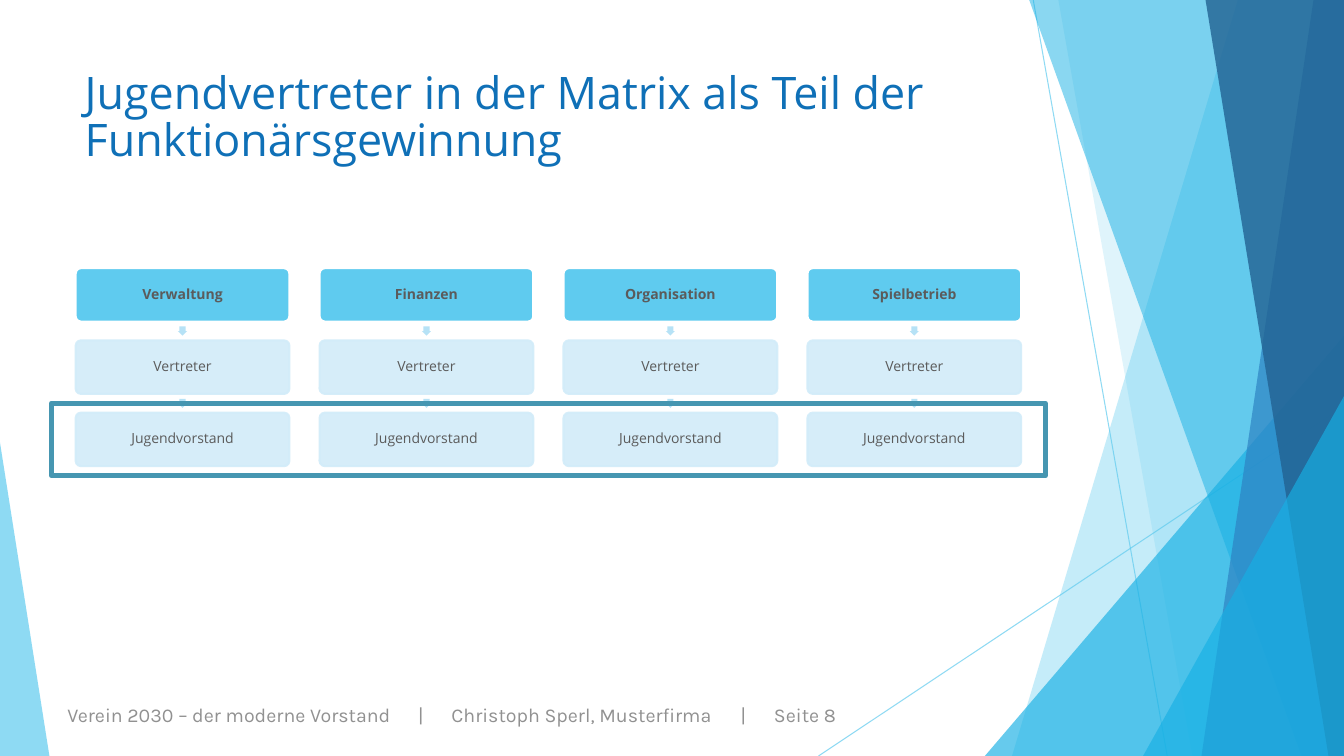
"""Build the slide on youth representatives in the club's function matrix."""
from dataclasses import dataclass

from lxml.etree import SubElement
from pptx import Presentation
from pptx.dml.color import RGBColor
from pptx.enum.shapes import MSO_CONNECTOR, MSO_SHAPE
from pptx.enum.text import MSO_ANCHOR, MSO_AUTO_SIZE, PP_ALIGN
from pptx.oxml.ns import qn
from pptx.util import Inches, Pt

COLOURS = {
    "sky": "5FCBEF", "cyan": "17B0E4", "blue": "2E83C3", "navy": "226292",
    "title": "0F70B7", "footer": "919191", "text": "5B5B5B", "white": "FFFFFF",
    "pale": "D2ECF9", "arrow": "B6E2F6", "frame": "4696B1",
}
FONT = "Open Sans"

prs = Presentation()
prs.slide_width, prs.slide_height = Inches(13.333), Inches(7.5)
s = prs.slides.add_slide(prs.slide_layouts[5])


@dataclass
class Box:
    """Place on the slide, in percent of its width and height."""
    left: float
    top: float
    width: float
    height: float


@dataclass
class Ray:
    """Thin line between two points."""
    x1: float
    y1: float
    x2: float
    y2: float


@dataclass
class Facet:
    """Full-height area from a slanted left edge to the right margin."""
    top_x: float
    bottom_x: float
    colour: str
    alpha: int


@dataclass
class Wedge:
    """Triangle at a slide corner, with its tip to the left (0) or right (1)."""
    box: Box
    tip: int
    colour: str
    alpha: int


@dataclass
class CardStyle:
    """Look of one row of cards."""
    fill: str
    line: str
    alpha: int
    bold: bool


BACKDROP = [
    Ray(76.88, 0, 86.85, 100),
    Ray(100, 53.73, 60.9, 100),
    Facet(92.1, 75.3, "sky", 36),
    Facet(78.75, 88.73, "sky", 20),
    Wedge(Box(73.28, 44.4, 26.72, 55.6), 1, "cyan", 66),
    Facet(76.58, 96.83, "cyan", 50),
    Facet(97.73, 89.4, "blue", 70),
    Facet(89.7, 98.85, "navy", 80),
    Wedge(Box(85.05, 52.4, 14.95, 47.6), 1, "cyan", 66),
    Wedge(Box(0, 58.53, 3.68, 41.47), 0, "sky", 70),
]
HEAD = CardStyle("sky", "white", 100, True)
BODY = CardStyle("pale", "pale", 90, False)
AREAS = ["Verwaltung", "Finanzen", "Organisation", "Spielbetrieb"]
ROLES = ["Vertreter", "Jugendvorstand"]
FIRST = Box(5.63, 35.47, 15.9, 7.07)
COL_STEP, ROW_STEP = 18.15, 9.56
ARROW = Inches(0.09)


def x(share: float) -> int:
    return round(prs.slide_width * share / 100)


def y(share: float) -> int:
    return round(prs.slide_height * share / 100)


def place(box: Box) -> tuple[int, int, int, int]:
    return x(box.left), y(box.top), x(box.width), y(box.height)


def rgb(name: str) -> RGBColor:
    return RGBColor.from_string(COLOURS[name])


def set_alpha(sp, percent: int) -> None:
    for clr in sp._element.spPr.iter(qn("a:srgbClr")):
        SubElement(clr, qn("a:alpha"), val=str(percent * 1000))


def paint(sp, fill: str, alpha: int = 100, line: str = "", width: float = 1.5) -> None:
    sp.shadow.inherit = False
    if fill:
        sp.fill.solid()
        sp.fill.fore_color.rgb = rgb(fill)
    else:
        sp.fill.background()
    if line:
        sp.line.color.rgb = rgb(line)
        sp.line.width = Pt(width)
    else:
        sp.line.fill.background()
    if alpha < 100:
        set_alpha(sp, alpha)


def style(p, size: int, colour: str, font: str = FONT, bold: bool = False) -> None:
    p.font.name, p.font.size, p.font.bold = font, Pt(size), bold
    p.font.color.rgb = rgb(colour)


def draw_ray(ray: Ray) -> None:
    c = s.shapes.add_connector(MSO_CONNECTOR.STRAIGHT, x(ray.x1), y(ray.y1), x(ray.x2), y(ray.y2))
    c.line.color.rgb = rgb("sky")
    c.line.width = Pt(0.75)
    set_alpha(c, 70)
    SubElement(c._element.spPr, qn("a:effectLst"))


def draw_facet(facet: Facet) -> None:
    fb = s.shapes.build_freeform(x(facet.top_x), 0)
    fb.add_line_segments([(x(100), 0), (x(100), y(100)), (x(facet.bottom_x), y(100))])
    paint(fb.convert_to_shape(), facet.colour, facet.alpha)


def draw_wedge(wedge: Wedge) -> None:
    sp = s.shapes.add_shape(MSO_SHAPE.ISOSCELES_TRIANGLE, *place(wedge.box))
    sp.adjustments[0] = wedge.tip
    paint(sp, wedge.colour, wedge.alpha)


def draw_card(col: int, row: int, text: str, look: CardStyle) -> None:
    box = Box(FIRST.left + col * COL_STEP, FIRST.top + row * ROW_STEP, FIRST.width, FIRST.height)
    sp = s.shapes.add_shape(MSO_SHAPE.ROUNDED_RECTANGLE, *place(box))
    sp.adjustments[0] = 0.1
    paint(sp, look.fill, look.alpha, look.line)
    tf = sp.text_frame
    tf.vertical_anchor = MSO_ANCHOR.MIDDLE
    p = tf.paragraphs[0]
    p.text, p.alignment, p.line_spacing = text, PP_ALIGN.CENTER, 0.9
    style(p, 10, "text", bold=look.bold)


def draw_arrow(col: int, row: int) -> None:
    mid_x = x(FIRST.left + col * COL_STEP + FIRST.width / 2)
    mid_y = y(FIRST.top + row * ROW_STEP + (FIRST.height + ROW_STEP) / 2)
    sp = s.shapes.add_shape(MSO_SHAPE.RIGHT_ARROW, mid_x - ARROW // 2, mid_y - ARROW // 2, ARROW, ARROW)
    sp.rotation = 90
    sp.adjustments[0] = 0.67
    paint(sp, "arrow")


def draw_title() -> None:
    sp = s.shapes.title
    sp.left, sp.top, sp.width, sp.height = place(Box(5.55, 8.93, 70.5, 19.2))
    tf = sp.text_frame
    tf.auto_size, tf.vertical_anchor = MSO_AUTO_SIZE.NONE, MSO_ANCHOR.TOP
    p = tf.paragraphs[0]
    p.text = "Jugendvertreter in der Matrix als Teil der Funktionärsgewinnung"
    p.alignment, p.line_spacing = PP_ALIGN.LEFT, 0.87
    style(p, 32, "title")


def draw_footer() -> None:
    tf = s.shapes.add_textbox(*place(Box(4.28, 92.27, 77.7, 4.53))).text_frame
    tf.word_wrap = True
    p = tf.paragraphs[0]
    p.text = "Verein 2030 – der moderne Vorstand\t|\tChristoph Sperl, Musterfirma\t|\tSeite 8"
    tabs = SubElement(p._p.get_or_add_pPr(), qn("a:tabLst"))
    for stop in (3.48, 3.81, 6.68, 7.01):
        SubElement(tabs, qn("a:tab"), pos=str(Inches(stop)), algn="l")
    style(p, 14, "footer", "Karla")


def main() -> None:
    painters = {Ray: draw_ray, Facet: draw_facet, Wedge: draw_wedge}
    for part in BACKDROP:
        painters[type(part)](part)
    draw_footer()
    draw_title()
    for col, area in enumerate(AREAS):
        draw_card(col, 0, area, HEAD)
        for row, role in enumerate(ROLES):
            draw_arrow(col, row)
            draw_card(col, row + 1, role, BODY)
    frame = s.shapes.add_shape(MSO_SHAPE.RECTANGLE, *place(Box(3.83, 53.33, 73.95, 9.6)))
    paint(frame, "", line="frame", width=3.75)
    prs.save("out.pptx")


if __name__ == "__main__":
    main()
